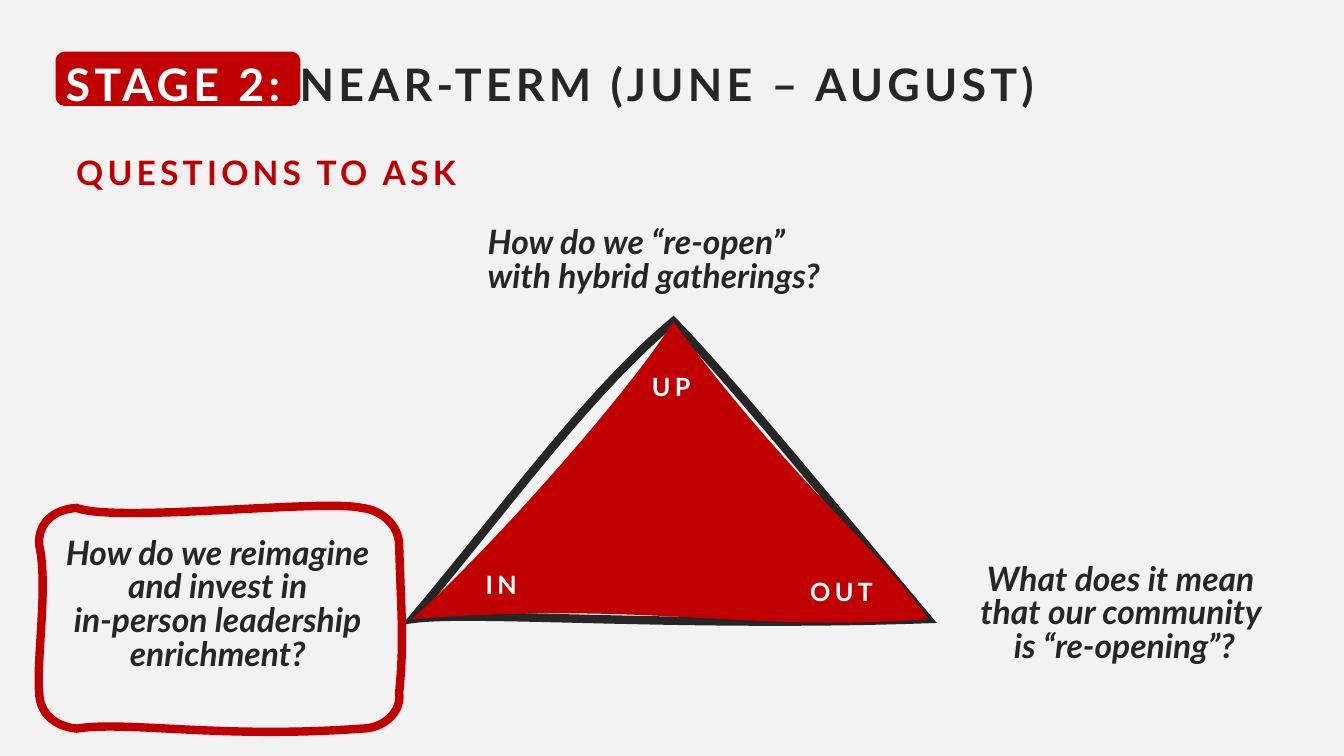
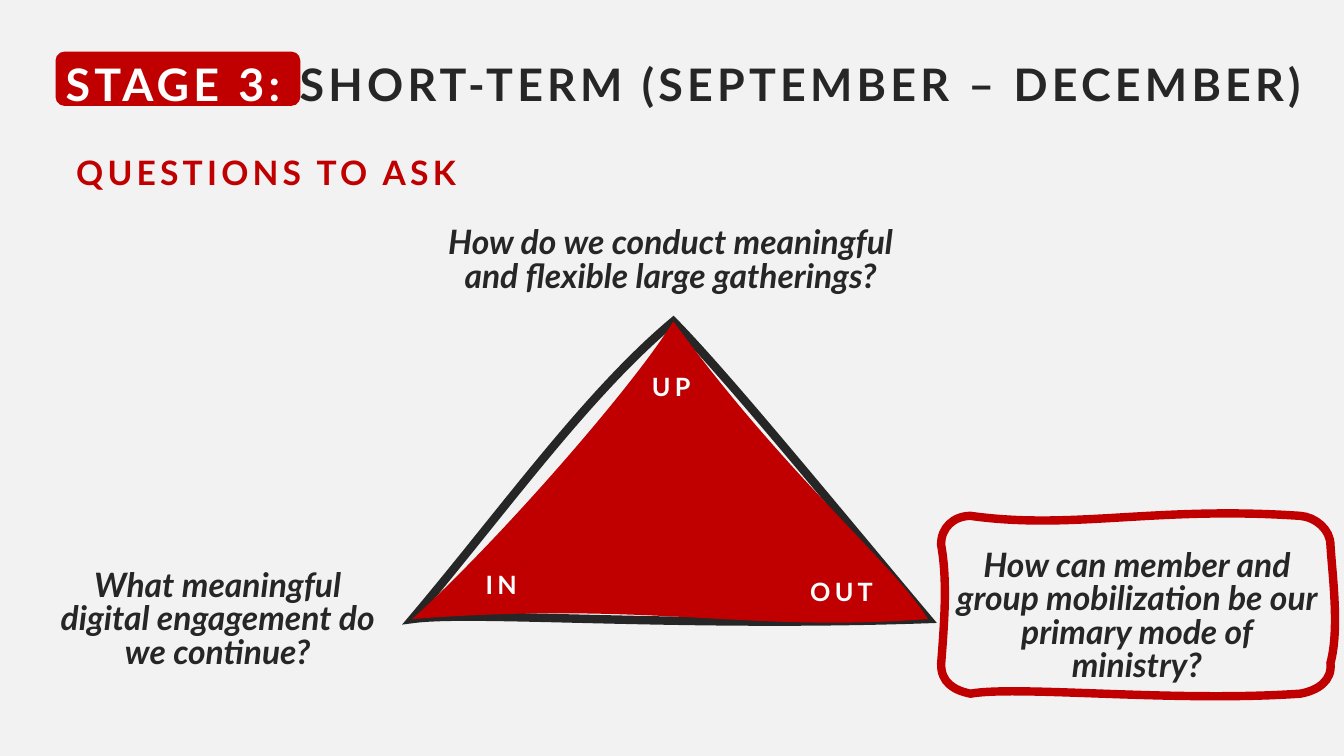
from copy import deepcopy
from lxml.etree import SubElement
from pptx import Presentation
from pptx.dml.color import RGBColor
from pptx.enum.shapes import MSO_SHAPE
from pptx.enum.text import MSO_ANCHOR, MSO_AUTO_SIZE, PP_ALIGN
from pptx.oxml.ns import qn
from pptx.util import Cm, Pt

HEX = {"paper": "F2F2F2", "red": "C00000", "ink": "262626", "white": "FFFFFF"}
RGB = {name: RGBColor.from_string(code) for name, code in HEX.items()}
LEFT, MID = PP_ALIGN.LEFT, PP_ALIGN.CENTER

# Outlines in cm: a start point, then curves of two handles and an end point
EDGE = [(10.39, 15.6),
        (12.67, 12.9), (14.78, 9.93), (16.97, 8.1),
        (18.34, 9.5), (20.7, 12.4), (23.39, 15.6),
        (17.17, 15.82), (11.86, 15.39), (10.39, 15.6)]
CORE = [(10.39, 15.6),
        (12.55, 13.64), (15.93, 9.78), (16.97, 8.1),
        (19.81, 11.99), (22.4, 14.07), (23.39, 15.6),
        (18.77, 15.95), (16.43, 15.14), (10.39, 15.6)]
RING_IN = [(0.99, 13.74),
           (0.94, 13.18), (1.37, 12.83), (1.93, 12.8),
           (2.95, 13.18), (8.15, 12.57), (9.12, 12.8),
           (9.6, 12.85), (10.06, 13.23), (10.06, 13.74),
           (10.11, 15.47), (10.19, 16.15), (10.06, 17.45),
           (10.13, 17.96), (9.65, 18.36), (9.12, 18.36),
           (5.54, 18.62), (3.2, 18.16), (1.93, 18.36),
           (1.4, 18.31), (0.99, 17.98), (0.99, 17.45),
           (0.91, 16.64), (1.22, 14.76), (0.99, 13.74)]
RING_OUT = [(23.72, 13.74),
            (23.7, 13.31), (24.03, 13), (24.46, 13),
            (27.05, 13.36), (29.11, 12.75), (32.77, 13),
            (33.15, 13.03), (33.53, 13.34), (33.53, 13.74),
            (33.58, 14.53), (33.76, 15.85), (33.53, 16.71),
            (33.58, 17.15), (33.22, 17.4), (32.77, 17.48),
            (29.59, 17.7), (25.65, 17.27), (24.46, 17.48),
            (24.05, 17.4), (23.7, 17.2), (23.72, 16.71),
            (23.8, 15.67), (23.88, 14.63), (23.72, 13.74)]

LABELS = [("UP", (16.18, 9.22, 1.6, 1.02)),
          ("IN", (11.99, 14.22, 1.45, 1.02)),
          ("OUT", (20.17, 14.4, 2.24, 1.02))]

# Each question: text, box in cm, alignment, wrap
STAGES = [
    ("STAGE 2:", " NEAR-TERM (JUNE – AUGUST)", RING_IN, [
        ("How do we “re-open”\nwith hybrid gatherings?",
         (12.04, 5.61, 10.36, 2.01), LEFT, False),
        ("How do we reimagine and invest in\nin-person leadership\nenrichment?",
         (0.99, 13.44, 8.99, 4.57), MID, True),
        ("What does it mean \nthat our community \nis “re-opening”?",
         (23.8, 14.1, 9.07, 2.87), MID, True)]),
    ("STAGE 3:", " SHORT-TERM (SEPTEMBER – DECEMBER)", RING_OUT, [
        ("How do we conduct meaningful\nand flexible large gatherings?",
         (10.08, 5.61, 13.64, 2.01), MID, False),
        ("What meaningful digital engagement do we continue?",
         (0.99, 14.25, 8.99, 2.87), MID, True),
        ("How can member and group mobilization be our primary mode of ministry?",
         (23.8, 13.74, 9.7, 3.71), MID, True)]),
]


def draw(slide, line, edge, core=None):
    """Add a curved outline and, if given, a red core with the same corners."""
    spots = [[Cm(x), Cm(y)] for x, y in edge]
    pen = slide.shapes.build_freeform(*spots[0], scale=1.0)
    pen.add_line_segments(spots[3::3], close=True)
    form = pen.convert_to_shape()
    form.shadow.inherit = False
    form.line.color.rgb = RGB[line]
    form.line.width = Pt(6)
    SubElement(form.line._get_or_add_ln(), qn("a:miter"), lim="800000")

    outer = form._element.find(".//" + qn("a:path"))
    pairs = [(outer, edge)]
    if core:
        inner = deepcopy(outer)
        outer.addnext(inner)
        outer.set("fill", "none")
        inner.set("stroke", "0")
        pairs.append((inner, core))
        form.fill.solid()
        form.fill.fore_color.rgb = RGB["red"]
    else:
        form.fill.background()

    # Turn each straight side into a curve
    for track, dots in pairs:
        for i, side in enumerate(track.findall(qn("a:lnTo"))):
            curve = SubElement(track, qn("a:cubicBezTo"))
            for x, y in dots[3 * i + 1:3 * i + 4]:
                SubElement(curve, qn("a:pt"), x=str(Cm(x) - form.left),
                           y=str(Cm(y) - form.top))
            track.replace(side, curve)


def write(slide, text, box, size, color, align=LEFT, wrap=False, ask=False):
    """Add bold text: an italic question if ask, else a spaced label."""
    frame = slide.shapes.add_textbox(*map(Cm, box)).text_frame
    frame.word_wrap = wrap
    frame.auto_size = MSO_AUTO_SIZE.SHAPE_TO_FIT_TEXT
    frame.text = text
    for para in frame.paragraphs:
        para.alignment = align
        font = para.font
        font.name, font.size, font.bold = "Lato", Pt(size), True
        font.color.rgb = RGB[color]
        if ask:
            font.italic = True
            para.line_spacing = Pt(24)
        else:
            font._rPr.set("spc", "300")


deck = Presentation()
deck.slide_width, deck.slide_height = Cm(33.87), Cm(19.05)
back = deck.slide_master.background.fill
back.solid()
back.fore_color.rgb = RGB["paper"]

for stage, term, ring, asks in STAGES:
    slide = deck.slides.add_slide(deck.slide_layouts[5])

    badge = slide.shapes.add_shape(MSO_SHAPE.ROUNDED_RECTANGLE,
                                   Cm(1.4), Cm(1.3), Cm(6.17), Cm(1.37))
    badge.shadow.inherit = False
    badge.fill.solid()
    badge.fill.fore_color.rgb = RGB["red"]
    badge.line.fill.background()
    slide.shapes._spTree.insert(2, badge._element)  # behind the title

    title = slide.shapes.title
    title.left, title.top, title.width, title.height = map(Cm, (1.4, 1.3, 32.51, 1.63))
    frame = title.text_frame
    frame.auto_size = MSO_AUTO_SIZE.SHAPE_TO_FIT_TEXT
    frame.vertical_anchor = MSO_ANCHOR.TOP
    para = frame.paragraphs[0]
    para.alignment = LEFT
    para.font.name, para.font.size, para.font.bold = "Lato", Pt(32), True
    para.font._rPr.set("spc", "300")
    for text, color in ((stage, "white"), (term, "ink")):
        run = para.add_run()
        run.text = text
        run.font.color.rgb = RGB[color]

    write(slide, "QUESTIONS TO ASK", (1.4, 3.71, 10.62, 1.27), 24, "red", MID)
    draw(slide, "ink", EDGE, CORE)
    for text, box in LABELS:
        write(slide, text, box, 18, "white")
    for text, box, align, wrap in asks:
        write(slide, text, box, 24, "ink", align, wrap, ask=True)
    draw(slide, "red", ring)

deck.save("out.pptx")
